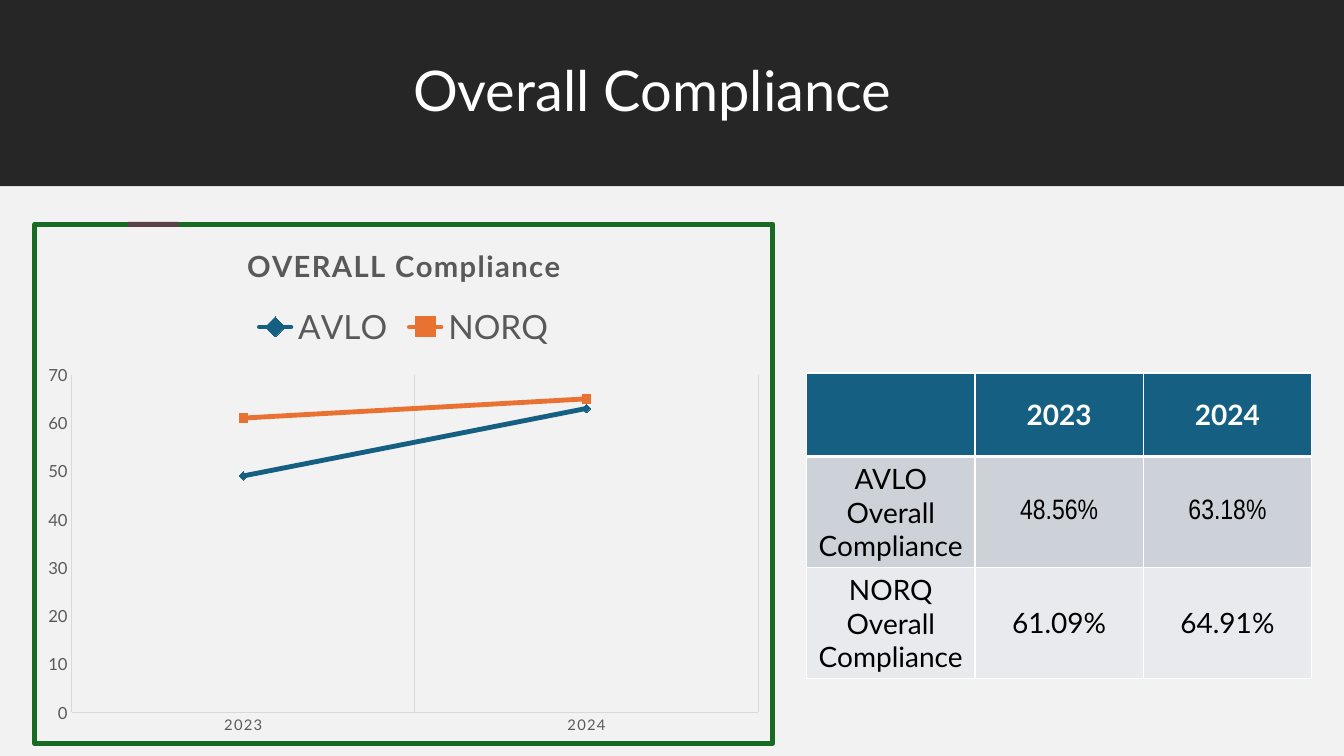
import pptx
import pptx.chart.data
import pptx.dml.color
import pptx.enum.chart
import pptx.enum.shapes
import pptx.enum.text
import pptx.oxml
import pptx.oxml.ns
import pptx.util

Inches, Pt = pptx.util.Inches, pptx.util.Pt
NS = pptx.oxml.ns.nsdecls("a", "c")
COLORS = {
    "header": "262626", "body": "F2F2F2", "accent": "5A4048", "white": "FFFFFF",
    "black": "000000", "gray": "595959", "grid": "D9D9D9", "frame": "196B24",
    "blue": "156082", "orange": "E97132", "band1": "CCD2D8", "band2": "E8EAED",
}
W, H = 13.33, 7.5
HEADER_H = 1.85


def rgb(name):
    return pptx.dml.color.RGBColor.from_string(COLORS[name])


def style_font(font, size, color, bold=False, name="Lato"):
    font.name, font.size, font.bold = name, Pt(size), bold
    font.color.rgb = rgb(color)


prs = pptx.Presentation()
prs.slide_width, prs.slide_height = Inches(W), Inches(H)
s = prs.slides.add_slide(prs.slide_layouts[6])

# Header and body bands, chart, then the accent on the chart frame
bands = [(0, 0, W, HEADER_H, "header"), (0, HEADER_H, W, H - HEADER_H, "body"),
         (1.27, 2.2, 0.5, 0.05, "accent")]
for x, y, w, h, color in bands:
    if color == "accent":
        data = pptx.chart.data.CategoryChartData()
        data.categories = ["2023", "2024"]
        data.add_series("AVLO", (49, 63))
        data.add_series("NORQ", (61, 65))
        chart = s.shapes.add_chart(
            pptx.enum.chart.XL_CHART_TYPE.LINE_MARKERS, Inches(0.32), Inches(2.2),
            Inches(7.37), Inches(5.2), data).chart
    sp = s.shapes.add_shape(pptx.enum.shapes.MSO_SHAPE.RECTANGLE,
                            Inches(x), Inches(y), Inches(w), Inches(h))
    sp.shadow.inherit = False
    sp.fill.solid()
    sp.fill.fore_color.rgb = rgb(color)
    sp.line.fill.background()

# Slide title
tf = s.shapes.add_textbox(Inches(4), Inches(0.58), Inches(5.02), Inches(0.98)).text_frame
tf.word_wrap = True
p = tf.paragraphs[0]
p.line_spacing = 0.9
r = p.add_run()
r.text = "Overall Compliance"
style_font(r.font, 40, "white")

# Chart
style_font(chart.font, 10, "black")
chart.has_title = True
r = chart.chart_title.text_frame.paragraphs[0].add_run()
r.text = "OVERALL Compliance"
style_font(r.font, 21, "gray", bold=True)
r.font._element.set("spc", "100")
chart.chart_title.include_in_layout = False
chart.has_legend = True
chart.legend.position = pptx.enum.chart.XL_LEGEND_POSITION.TOP
chart.legend.include_in_layout = False
style_font(chart.legend.font, 24, "gray")

cat, val = chart.category_axis, chart.value_axis
for axis, size in ((cat, 10.6), (val, 12)):
    style_font(axis.tick_labels.font, size, "gray")
    axis.major_tick_mark = axis.minor_tick_mark = pptx.enum.chart.XL_TICK_MARK.NONE
    axis.format.line.color.rgb = rgb("grid")
    axis.format.line.width = Pt(0.75)
cat.tick_labels.font._element.set("spc", "100")
cat.has_major_gridlines = True
cat.major_gridlines.format.line.color.rgb = rgb("grid")
cat.major_gridlines.format.line.width = Pt(0.75)
val.has_major_gridlines = False
val.minimum_scale, val.maximum_scale, val.major_unit = 0, 70, 10
val.tick_labels.number_format = "0"
val.tick_labels.number_format_is_linked = False

MARKER = pptx.enum.chart.XL_MARKER_STYLE
plot = chart.plots[0]
plot.vary_by_categories = False
for series, color, marker in zip(plot.series, ("blue", "orange"),
                                 (MARKER.DIAMOND, MARKER.SQUARE)):
    series.smooth = False
    series.format.line.color.rgb = rgb(color)
    series.format.line.width = Pt(3.5)
    series._element.spPr.find(pptx.oxml.ns.qn("a:ln")).set("cap", "rnd")
    series.marker.style, series.marker.size = marker, 6
    series.marker.format.fill.solid()
    series.marker.format.fill.fore_color.rgb = rgb(color)
    series.marker.format.line.color.rgb = rgb(color)

# Chart frame and fixed plot area
space = chart._chartSpace
space.find(pptx.oxml.ns.qn("c:chart")).addnext(pptx.oxml.parse_xml(
    f'<c:spPr {NS}><a:noFill/><a:ln w="{Pt(3.5)}"><a:solidFill>'
    f'<a:srgbClr val="{COLORS["frame"]}"/></a:solidFill><a:round/></a:ln></c:spPr>'))
area = space.find(".//" + pptx.oxml.ns.qn("c:plotArea"))
for old in area.findall(pptx.oxml.ns.qn("c:layout")):
    area.remove(old)
share = "".join(f'<c:{k} val="{v}"/>' for k, v in (
    ("layoutTarget", "inner"), ("xMode", "edge"), ("yMode", "edge"),
    ("x", 0.05), ("y", 0.29), ("w", 0.93), ("h", 0.65)))
area.insert(0, pptx.oxml.parse_xml(
    f"<c:layout {NS}><c:manualLayout>{share}</c:manualLayout></c:layout>"))

# Table
rows = [("", "2023", "2024"),
        ("AVLO Overall Compliance", "48.56%", "63.18%"),
        ("NORQ Overall Compliance", "61.09%", "64.91%")]
fills = ("blue", "band1", "band2")
heights = (0.83, 1.1, 1.1)
table = s.shapes.add_table(3, 3, Inches(8), Inches(3.7), Inches(5.02), Inches(3.03)).table
for col in table.columns:
    col.width = Inches(1.67)
for i, texts in enumerate(rows):
    table.rows[i].height = Inches(heights[i])
    for j, text in enumerate(texts):
        cell = table.cell(i, j)
        cell.vertical_anchor = pptx.enum.text.MSO_ANCHOR.MIDDLE
        p = cell.text_frame.paragraphs[0]
        p.alignment = pptx.enum.text.PP_ALIGN.CENTER
        narrow = i == 1 and j > 0
        if narrow:
            cell.margin_left = cell.margin_right = cell.margin_top = Inches(0.01)
            cell.margin_bottom = 0
        if text:
            r = p.add_run()
            r.text = text
            style_font(r.font, 20, "black" if i else "white", bold=i == 0,
                       name="Arial Narrow" if narrow else "Lato")
        cell.fill.solid()
        cell.fill.fore_color.rgb = rgb(fills[i])
        for k, side in enumerate(("lnL", "lnR", "lnT", "lnB")):
            thick = (i, side) in ((0, "lnB"), (1, "lnT"))
            cell._tc.tcPr.insert(k, pptx.oxml.parse_xml(
                f'<a:{side} {NS} w="{Pt(3 if thick else 1)}"><a:solidFill>'
                f'<a:srgbClr val="{COLORS["white"]}"/></a:solidFill></a:{side}>'))

prs.save("out.pptx")
